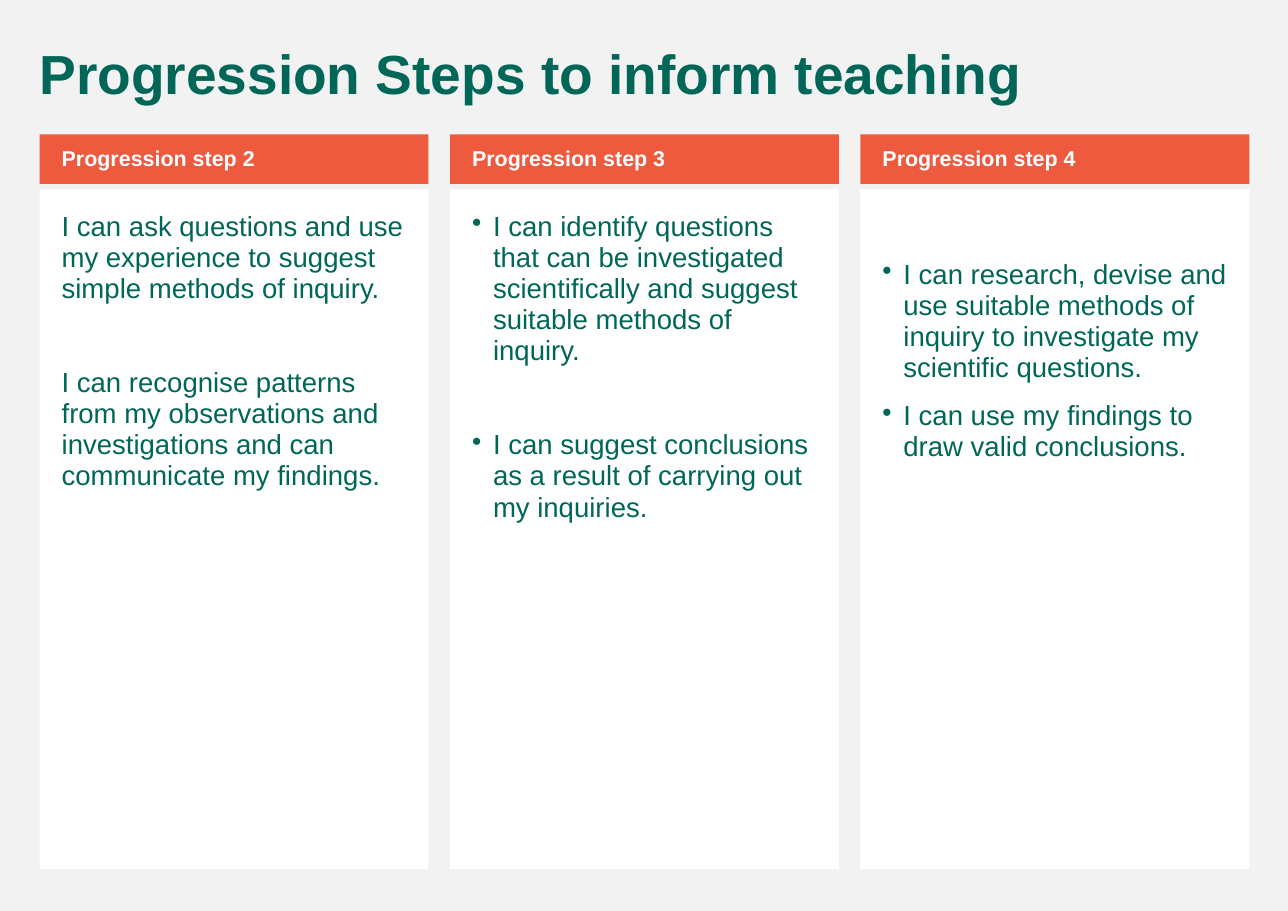
import pptx
import pptx.dml.color
import pptx.enum.shapes
import pptx.enum.text
import pptx.util
from lxml import etree
from pptx.util import Inches

COLORS = {"page": "F2F2F2", "panel": "FFFFFF", "header": "ED5A3E",
          "text": "006758", "header_text": "FFFFFF"}
FORMATS = {
    "title": {"size": pptx.util.Pt(36), "bold": True},
    "header": {"size": pptx.util.Pt(14), "bold": True},
    "body": {"size": pptx.util.Pt(18), "bold": False},
}
SPACING = {"line_spacing": 0.94, "space_before": pptx.util.Pt(11)}
WIDE_GAP = pptx.util.Pt(41.4)

LEFT, RIGHT, COLUMN_WIDTH = 0.36, 11.34, 3.53
HEADER_TOP, HEADER_HEIGHT = 1.22, 0.45
PANEL_TOP, PANEL_HEIGHT = 1.72, 6.17

# Heading, bulleted, top inset, gap between statements, statements
STEPS = [
    ("Progression step 2", False, 0.2, WIDE_GAP, [
        "I can ask questions and use my experience to suggest simple methods of inquiry.",
        "I can recognise patterns from my observations and investigations "
        "and can communicate my findings."]),
    ("Progression step 3", True, 0.2, WIDE_GAP, [
        "I can identify questions that can be investigated scientifically "
        "and suggest suitable methods of inquiry.",
        "I can suggest conclusions as a result of carrying out my inquiries."]),
    ("Progression step 4", True, 0.64, SPACING["space_before"], [
        "I can research, devise and use suitable methods of inquiry "
        "to investigate my scientific questions.",
        "I can use my findings to draw valid conclusions."]),
]


def rgb(name):
    return pptx.dml.color.RGBColor.from_string(COLORS[name])


def add_bullet(p):
    pPr = p._p.get_or_add_pPr()
    pPr.set("marL", str(Inches(0.19)))
    pPr.set("indent", str(Inches(-0.19)))
    bullet = etree.SubElement(pPr, pptx.oxml.ns.qn("a:buChar"))
    bullet.set("char", "•")


class SlideBuilder:
    def __init__(self, slide, font="Arial"):
        self.slide = slide
        self.font = font
        fill = slide.background.fill
        fill.solid()
        fill.fore_color.rgb = rgb("page")

    def add_text(self, s, lines, style, color, insets, anchor="TOP",
                 bulleted=False, gap=SPACING["space_before"]):
        """Fill a shape with one paragraph per line; insets run left, top, right, bottom."""
        tf = s.text_frame
        tf.word_wrap = True
        tf.vertical_anchor = pptx.enum.text.MSO_ANCHOR[anchor]
        for side, inset in zip(("left", "top", "right", "bottom"), insets):
            setattr(tf, f"margin_{side}", Inches(inset))
        for i, line in enumerate(lines):
            p = tf.add_paragraph() if i else tf.paragraphs[0]
            p.alignment = pptx.enum.text.PP_ALIGN.LEFT
            for name, value in SPACING.items():
                setattr(p, name, value)
            if i:
                p.space_before = gap
            if bulleted:
                add_bullet(p)
            r = p.add_run()
            r.text = line
            r.font.name = self.font
            r.font.color.rgb = rgb(color)
            for name, value in FORMATS[style].items():
                setattr(r.font, name, value)

    def box(self, left, top, width, height, fill):
        s = self.slide.shapes.add_shape(
            pptx.enum.shapes.MSO_SHAPE.RECTANGLE,
            Inches(left), Inches(top), Inches(width), Inches(height))
        s.shadow.inherit = False
        s.fill.solid()
        s.fill.fore_color.rgb = rgb(fill)
        s.line.fill.background()
        return s

    def title(self, text):
        s = self.slide.shapes.add_textbox(
            Inches(0.26), Inches(0.36), Inches(11.08), Inches(0.65))
        self.add_text(s, [text], "title", "text", (0.1, 0.05, 0.1, 0.05))

    def column(self, left, heading, bulleted, top_inset, gap, statements):
        panel = self.box(left, PANEL_TOP, COLUMN_WIDTH, PANEL_HEIGHT, "panel")
        self.add_text(panel, statements, "body", "text", (0.2, top_inset, 0.2, 0.2),
                      bulleted=bulleted, gap=gap)
        header = self.box(left, HEADER_TOP, COLUMN_WIDTH, HEADER_HEIGHT, "header")
        self.add_text(header, [heading], "header", "header_text",
                      (0.2, 0.05, 0.1, 0.05), anchor="MIDDLE")


def main():
    prs = pptx.Presentation()
    prs.slide_width, prs.slide_height = Inches(11.69), Inches(8.27)
    builder = SlideBuilder(prs.slides.add_slide(prs.slide_layouts[6]))
    pitch = (RIGHT - LEFT - COLUMN_WIDTH) / (len(STEPS) - 1)
    for i, step in enumerate(STEPS):
        builder.column(LEFT + i * pitch, *step)
    builder.title("Progression Steps to inform teaching")
    prs.save("out.pptx")


if __name__ == "__main__":
    main()
